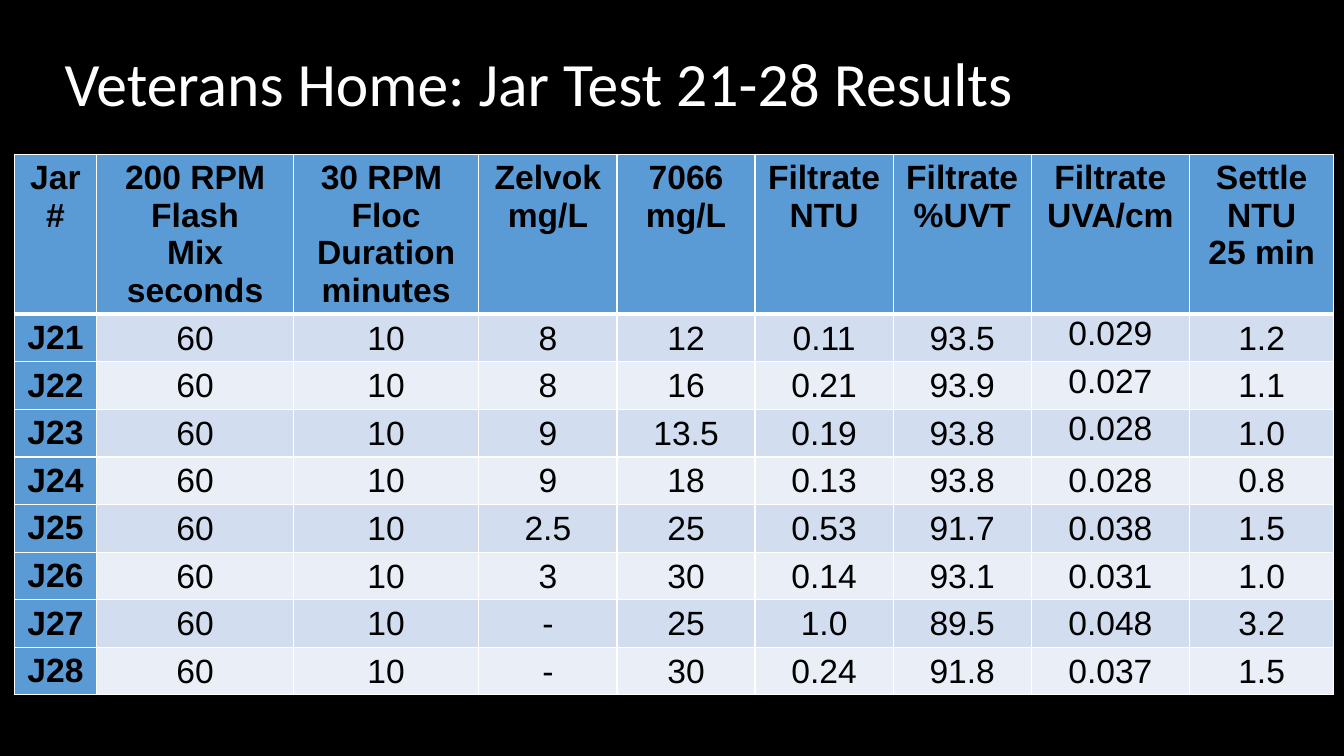
from lxml import etree
from pptx import Presentation
from pptx.dml.color import RGBColor
from pptx.enum.text import MSO_ANCHOR, PP_ALIGN
from pptx.oxml.ns import qn
from pptx.util import Inches, Pt

CENTER, LEFT = PP_ALIGN.CENTER, PP_ALIGN.LEFT
TOP, MIDDLE = MSO_ANCHOR.TOP, MSO_ANCHOR.MIDDLE
COLORS = {
    "background": "000000",
    "title": "FFFFFF",
    "text": "000000",
    "border": "FFFFFF",
    "header": "5B9BD5",
    "odd": "D2DEEF",
    "even": "EAEFF7",
}
HEADINGS = [
    "Jar\n#",
    "200 RPM\nFlash\nMix\nseconds",
    "30 RPM \nFloc\nDuration\nminutes",
    "Zelvok\nmg/L",
    "7066\nmg/L",
    "Filtrate\nNTU",
    "Filtrate\n%UVT",
    "Filtrate\nUVA/cm",
    "Settle\nNTU\n25 min",
]
RESULTS = [
    ["J21", "60", "10", "8", "12", "0.11", "93.5", "0.029", "1.2"],
    ["J22", "60", "10", "8", "16", "0.21", "93.9", "0.027", "1.1"],
    ["J23", "60", "10", "9", "13.5", "0.19", "93.8", "0.028", "1.0"],
    ["J24", "60", "10", "9", "18", "0.13", "93.8", "0.028", "0.8"],
    ["J25", "60", "10", "2.5", "25", "0.53", "91.7", "0.038", "1.5"],
    ["J26", "60", "10", "3", "30", "0.14", "93.1", "0.031", "1.0"],
    ["J27", "60", "10", "-", "25", "1.0", "89.5", "0.048", "3.2"],
    ["J28", "60", "10", "-", "30", "0.24", "91.8", "0.037", "1.5"],
]
COLUMN_WIDTHS = [0.82, 1.95, 1.84, 1.37, 1.37, 1.37, 1.37, 1.57, 1.43]
ROW_HEIGHT = 0.41
UVA_COLUMN = 7
TOP_ALIGNED_UVA_ROWS = (1, 2, 3)
VALUE_MARGINS = {"margin_left": 0.01, "margin_top": 0.01, "margin_right": 0.01, "margin_bottom": 0}


def style_text(paragraph, align, **formats):
    paragraph.alignment = align
    for name, value in formats.items():
        setattr(paragraph.font, name, value)


def add_border(cell, side, points):
    line = etree.SubElement(cell._tc.get_or_add_tcPr(), qn(f"a:{side}"), w=str(Pt(points)))
    fill = etree.SubElement(line, qn("a:solidFill"))
    etree.SubElement(fill, qn("a:srgbClr"), val=COLORS["border"])


presentation = Presentation()
presentation.slide_width = Inches(13.33)
presentation.slide_height = Inches(7.5)
slide = presentation.slides.add_slide(presentation.slide_layouts[5])
slide.background.fill.solid()
slide.background.fill.fore_color.rgb = RGBColor.from_string(COLORS["background"])

title = slide.shapes.title
title.left, title.top = Inches(0.54), Inches(0.13)
title.width, title.height = Inches(11.88), Inches(1.45)
title.text_frame.text = "Veterans Home: Jar Test 21-28 Results"
title.text_frame.vertical_anchor = MIDDLE
heading = title.text_frame.paragraphs[0]
heading.line_spacing = 0.9
style_text(heading, LEFT, name="Calibri", size=Pt(44))
heading.font.color.rgb = RGBColor.from_string(COLORS["title"])

rows = [HEADINGS] + RESULTS
results_frame = slide.shapes.add_table(
    len(rows), len(HEADINGS), Inches(0.14), Inches(1.53), Inches(13.09), Inches(5.7)
)
results = results_frame.table
for column, width in zip(results.columns, COLUMN_WIDTHS):
    column.width = Inches(width)
for row in results.rows:
    row.height = Inches(ROW_HEIGHT)

for r, values in enumerate(rows):
    for c, value in enumerate(values):
        cell = results.cell(r, c)
        is_heading = r == 0 or c == 0
        cell.text = value
        for paragraph in cell.text_frame.paragraphs:
            style_text(paragraph, CENTER, name="Arial", size=Pt(24), bold=is_heading)
            paragraph.font.color.rgb = RGBColor.from_string(COLORS["text"])
        if not is_heading:
            for name, inset in VALUE_MARGINS.items():
                setattr(cell, name, Inches(inset))
        raised = c == UVA_COLUMN and r in TOP_ALIGNED_UVA_ROWS
        cell.vertical_anchor = TOP if is_heading or raised else MIDDLE
        widths = {"lnL": 1, "lnR": 1, "lnT": 3 if r == 1 else 1, "lnB": 3 if r == 0 else 1}
        for side, points in widths.items():
            add_border(cell, side, points)
        band = "header" if is_heading else "odd" if r % 2 else "even"
        cell.fill.solid()
        cell.fill.fore_color.rgb = RGBColor.from_string(COLORS[band])

results_frame.height = Inches(5.7)
presentation.save("out.pptx")
